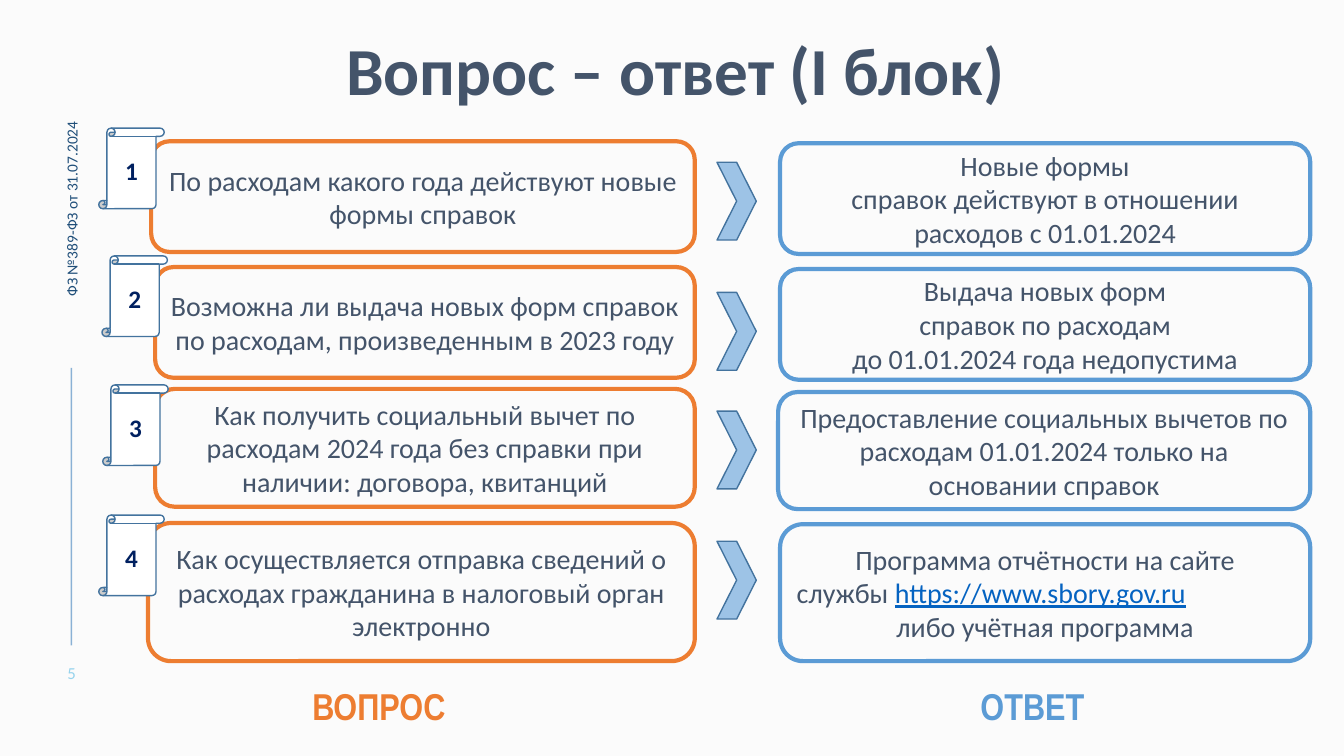
from dataclasses import dataclass

from lxml.etree import SubElement
from pptx import Presentation
from pptx.dml.color import RGBColor
from pptx.enum.shapes import MSO_CONNECTOR, MSO_SHAPE
from pptx.enum.text import MSO_ANCHOR, PP_ALIGN
from pptx.oxml.ns import qn
from pptx.shapes.autoshape import Shape
from pptx.slide import Slide
from pptx.util import Cm, Pt

SLATE = RGBColor(0x44, 0x54, 0x6A)
ORANGE = RGBColor(0xED, 0x7D, 0x31)
BLUE = RGBColor(0x5B, 0x9B, 0xD5)
PALE_BLUE = RGBColor(0x9D, 0xC3, 0xE6)
OUTLINE = RGBColor(0x43, 0x73, 0x9E)
NAVY = RGBColor(0x00, 0x20, 0x60)
LAW_BLUE = RGBColor(0x1F, 0x4E, 0x79)
RULE_BLUE = RGBColor(0x2E, 0x75, 0xB6)
LINK_BLUE = RGBColor(0x05, 0x63, 0xC1)
PAGE_BLUE = RGBColor(0x96, 0xD3, 0xED)
WHITE = RGBColor(0xFF, 0xFF, 0xFF)
BACKGROUND = RGBColor(0xFB, 0xFB, 0xFB)

QUESTION_RIGHT = 17.51
ANSWER_RIGHT = 33.02


@dataclass
class Card:
    left: float
    top: float
    height: float
    text: str


@dataclass
class Row:
    question: Card
    answer: Card
    scroll_left: float
    scroll_top: float
    chevron_top: float


@dataclass
class Label:
    left: float
    top: float
    width: float
    height: float
    text: str
    size: float
    color: RGBColor
    font: str = "Calibri"
    bold: bool = False
    align: PP_ALIGN = PP_ALIGN.CENTER
    rotation: float = 0


ROWS = [
    Row(Card(3.81, 3.56, 2.79, "По расходам какого года действуют новые формы справок"),
        Card(19.66, 3.61, 2.79, "Новые формы\nсправок действуют в отношении\nрасходов с 01.01.2024"),
        2.49, 3.23, 4.09),
    Row(Card(3.91, 6.73, 2.79,
             "Возможна ли выдача новых форм справок по расходам, произведенным в 2023 году"),
        Card(19.66, 6.78, 2.79, "Выдача новых форм\nсправок по расходам\nдо 01.01.2024 года недопустима"),
        2.57, 6.45, 7.37),
    Row(Card(3.91, 9.8, 2.97,
             "Как получить социальный вычет по расходам 2024 года без справки при наличии: договора, квитанций"),
        Card(19.61, 9.88, 2.95,
             "Предоставление социальных вычетов по расходам 01.01.2024 только на основании справок"),
        2.59, 9.7, 10.36),
    Row(Card(3.73, 13.18, 3.48,
             "Как осуществляется отправка сведений о расходах гражданина в налоговый орган электронно"),
        Card(19.66, 13.21, 3.45, "Программа отчётности на сайте\nслужбы \nлибо учётная программа"),
        2.49, 12.98, 13.64),
]

LABELS = [
    Label(7.62, 17.07, 5.74, 1.4, "ВОПРОС", 26.7, ORANGE, "Arial Narrow", True, PP_ALIGN.LEFT),
    Label(24.46, 17.09, 6.2, 1.4, "ОТВЕТ", 26.7, BLUE, "Arial Narrow", True, PP_ALIGN.LEFT),
    Label(1.17, 16.71, 1.27, 0.51, "5", 12, PAGE_BLUE),
    Label(-1.65, 5, 6.91, 0.53, "ФЗ №389-ФЗ от 31.07.2024", 11, LAW_BLUE, rotation=270),
]


def set_text(sp: Shape, text: str, size: float, color: RGBColor, bold: bool = False,
             font: str = "Calibri", align: PP_ALIGN = PP_ALIGN.CENTER) -> None:
    tf = sp.text_frame
    tf.text = text
    tf.word_wrap = True
    tf.vertical_anchor = MSO_ANCHOR.MIDDLE
    for p in tf.paragraphs:
        p.alignment = align
        for r in p.runs:
            r.font.name = font
            r.font.size = Pt(size)
            r.font.bold = bold
            r.font.color.rgb = color


def add_outlined(s: Slide, kind: MSO_SHAPE, left: float, top: float, width: float, height: float,
                 line: RGBColor, weight: float, fill: RGBColor | None = None) -> Shape:
    sp = s.shapes.add_shape(kind, Cm(left), Cm(top), Cm(width), Cm(height))
    sp.shadow.inherit = False
    sp.line.color.rgb = line
    sp.line.width = Pt(weight)
    if fill is None:
        sp.fill.background()
    else:
        sp.fill.solid()
        sp.fill.fore_color.rgb = fill
    return sp


def add_card(s: Slide, card: Card, right: float, line: RGBColor) -> Shape:
    sp = add_outlined(s, MSO_SHAPE.ROUNDED_RECTANGLE, card.left, card.top,
                      right - card.left, card.height, line, 3)
    set_text(sp, card.text, 20, SLATE)
    return sp


def add_row(s: Slide, number: int, row: Row) -> Shape:
    add_card(s, row.question, QUESTION_RIGHT, ORANGE)
    answer = add_card(s, row.answer, ANSWER_RIGHT, BLUE)
    scroll = add_outlined(s, MSO_SHAPE.VERTICAL_SCROLL, row.scroll_left, row.scroll_top,
                          1.65, 2.03, OUTLINE, 1, WHITE)
    set_text(scroll, str(number), 18, NAVY, True)
    add_outlined(s, MSO_SHAPE.CHEVRON, 18.07, row.chevron_top, 0.99, 1.96, OUTLINE, 1, PALE_BLUE)
    return answer


def add_site_address(answer: Shape) -> None:
    site = answer.text_frame.paragraphs[1]
    site.alignment = PP_ALIGN.LEFT
    r = site.add_run()
    r.text = "https://www.sbory.gov.ru"
    r.font.name = "Calibri"
    r.font.size = Pt(20)
    r.font.underline = True
    r.font.color.rgb = LINK_BLUE


def add_label(s: Slide, label: Label) -> None:
    sp = s.shapes.add_textbox(Cm(label.left), Cm(label.top), Cm(label.width), Cm(label.height))
    set_text(sp, label.text, label.size, label.color, label.bold, label.font, label.align)
    sp.rotation = label.rotation


def add_side_rule(s: Slide) -> None:
    rule = s.shapes.add_connector(MSO_CONNECTOR.STRAIGHT, Cm(1.8), Cm(9.27), Cm(1.8), Cm(16.26))
    rule.line.color.rgb = RULE_BLUE
    rule.line.width = Pt(1)
    color = rule.line._get_or_add_ln().find(".//" + qn("a:srgbClr"))
    SubElement(color, qn("a:alpha")).set("val", "55000")
    SubElement(rule._element.spPr, qn("a:effectLst"))


def main() -> None:
    prs = Presentation()
    prs.slide_width, prs.slide_height = Cm(33.87), Cm(19.05)
    s = prs.slides.add_slide(prs.slide_layouts[5])
    s.background.fill.solid()
    s.background.fill.fore_color.rgb = BACKGROUND

    title = s.shapes.title
    title.left, title.top, title.width, title.height = Cm(1.55), Cm(0.58), Cm(30.94), Cm(2.31)
    set_text(title, "Вопрос – ответ (I блок)", 48, SLATE, True)

    answers = [add_row(s, number, row) for number, row in enumerate(ROWS, 1)]
    add_site_address(answers[-1])
    for label in LABELS:
        add_label(s, label)
    add_side_rule(s)
    prs.save("out.pptx")


if __name__ == "__main__":
    main()
